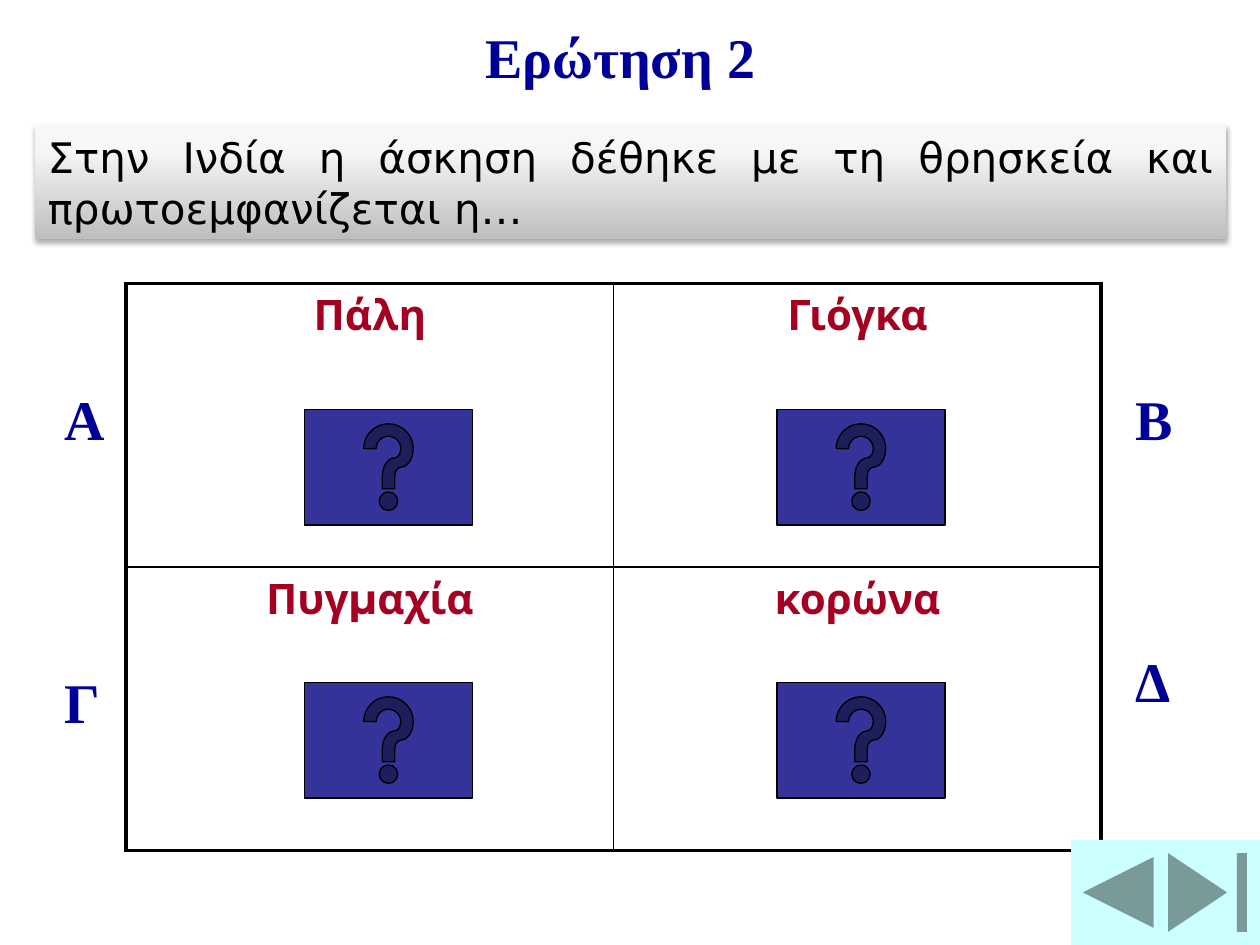
from lxml import etree
from pptx import Presentation
from pptx.dml.color import RGBColor
from pptx.enum.shapes import MSO_SHAPE
from pptx.enum.text import MSO_ANCHOR, PP_ALIGN
from pptx.oxml.ns import qn
from pptx.util import Pt

CENTER, JUSTIFY, LEFT = PP_ALIGN.CENTER, PP_ALIGN.JUSTIFY, PP_ALIGN.LEFT
TOP, MIDDLE = MSO_ANCHOR.TOP, MSO_ANCHOR.MIDDLE
HELP = MSO_SHAPE.ACTION_BUTTON_HELP
END = MSO_SHAPE.ACTION_BUTTON_END
BACK = MSO_SHAPE.ACTION_BUTTON_BACK_OR_PREVIOUS
RECTANGLE = MSO_SHAPE.RECTANGLE

NAVY = RGBColor(0x00, 0x00, 0x99)
INDIGO = RGBColor(0x33, 0x33, 0x99)
CRIMSON = RGBColor(0xA5, 0x00, 0x21)
AQUA = RGBColor(0xCC, 0xFF, 0xFF)
GREY = RGBColor(0xBE, 0xBE, 0xBE)
PALE = RGBColor(0xF7, 0xF7, 0xF7)
WHITE = RGBColor(0xFF, 0xFF, 0xFF)
BLACK = RGBColor(0x00, 0x00, 0x00)

# Content
TITLE = "Ερώτηση 2"
QUESTION = "Στην Ινδία η άσκηση δέθηκε με τη θρησκεία και πρωτοεμφανίζεται η…"
ANSWERS = [["Πάλη", "Γιόγκα"], ["Πυγμαχία", "κορώνα"]]
LETTERS = [("Α", 30, 216), ("Γ", 30, 378), ("Β", 642, 216), ("Δ", 642, 366)]
NAVIGATION = [(END, 660, 60), (BACK, 612, 54)]

# Layout in points
TABLE_LEFT, TABLE_TOP, COLUMN_WIDTH, ROW_HEIGHT = 72, 162, 278.64, 162
HELP_LEFTS, HELP_TOPS = (174, 444), (234, 390)
OUTER, INNER = 2.25, 1


def write(frame, text, font_name, size, color, bold=False, align=LEFT):
    frame.text = text
    frame.word_wrap = True
    paragraph = frame.paragraphs[0]
    paragraph.alignment = align
    font = paragraph.runs[0].font
    font.name, font.size, font.bold = font_name, Pt(size), bold
    font.color.rgb = color


def add_button(slide, kind, left, top, width, height, color, outlined):
    button = slide.shapes.add_shape(kind, Pt(left), Pt(top), Pt(width), Pt(height))
    button.shadow.inherit = False
    button.fill.solid()
    button.fill.fore_color.rgb = color
    if outlined:
        button.line.color.rgb = BLACK
        button.line.width = Pt(0.75)
    else:
        button.line.fill.background()


def set_borders(cell, widths):
    properties = cell._tc.get_or_add_tcPr()
    for position, (side, width) in enumerate(widths.items()):
        line = etree.Element(qn(f"a:ln{side}"), w=str(Pt(width)))
        fill = etree.SubElement(line, qn("a:solidFill"))
        etree.SubElement(fill, qn("a:srgbClr"), val=str(BLACK))
        properties.insert(position, line)


def add_answers(slide):
    rows, columns = len(ANSWERS), len(ANSWERS[0])
    table = slide.shapes.add_table(
        rows, columns, Pt(TABLE_LEFT), Pt(TABLE_TOP),
        Pt(columns * COLUMN_WIDTH), Pt(rows * ROW_HEIGHT)).table
    table.first_row = table.horz_banding = False
    for r, row in enumerate(ANSWERS):
        for c, answer in enumerate(row):
            cell = table.cell(r, c)
            write(cell.text_frame, answer, "Montserrat", 24, CRIMSON, True, CENTER)
            cell.fill.solid()
            cell.fill.fore_color.rgb = WHITE
            set_borders(cell, {
                "L": OUTER if c == 0 else INNER,
                "R": OUTER if c == columns - 1 else INNER,
                "T": OUTER if r == 0 else INNER,
                "B": OUTER if r == rows - 1 else INNER,
            })


def add_question(slide):
    banner = slide.shapes.add_shape(RECTANGLE, Pt(20.16), Pt(71.28), Pt(680.4), Pt(65.52))
    banner.line.fill.background()
    banner.fill.gradient()
    banner.fill.gradient_angle = 90
    for stop, color, position in zip(banner.fill.gradient_stops, (GREY, PALE), (0, 0.8)):
        stop.color.rgb = color
        stop.position = position
    # Soft shadow below the banner
    banner.shadow.inherit = False
    effects = banner._element.spPr.find(qn("a:effectLst"))
    shadow = etree.SubElement(effects, qn("a:outerShdw"), blurRad=str(Pt(3.1)),
                              dist=str(Pt(1.8)), dir="5400000", rotWithShape="0")
    shade = etree.SubElement(shadow, qn("a:srgbClr"), val=str(BLACK))
    etree.SubElement(shade, qn("a:alpha"), val="35000")
    write(banner.text_frame, QUESTION, "DejaVu Sans", 24, BLACK, align=JUSTIFY)
    banner.text_frame.vertical_anchor = MIDDLE


def main():
    presentation = Presentation()
    presentation.slide_width, presentation.slide_height = Pt(720), Pt(540)
    slide = presentation.slides.add_slide(presentation.slide_layouts[5])

    # Title
    title = slide.shapes.title
    title.left, title.top, title.width, title.height = Pt(270), Pt(9), Pt(192), Pt(45.5)
    write(title.text_frame, TITLE, "Times New Roman", 32, NAVY, True)
    title.text_frame.vertical_anchor = TOP

    # Answers and their letters
    add_answers(slide)
    for letter, left, top in LETTERS:
        label = slide.shapes.add_textbox(Pt(left), Pt(top), Pt(36), Pt(45.5))
        write(label.text_frame, letter, "Times New Roman", 32, NAVY, True)

    # Help and navigation buttons
    for left in HELP_LEFTS:
        for top in HELP_TOPS:
            add_button(slide, HELP, left, top, 96, 66, INDIGO, True)
    for kind, left, width in NAVIGATION:
        add_button(slide, kind, left, 480, width, 60, AQUA, False)

    add_question(slide)
    presentation.save("out.pptx")


if __name__ == "__main__":
    main()
